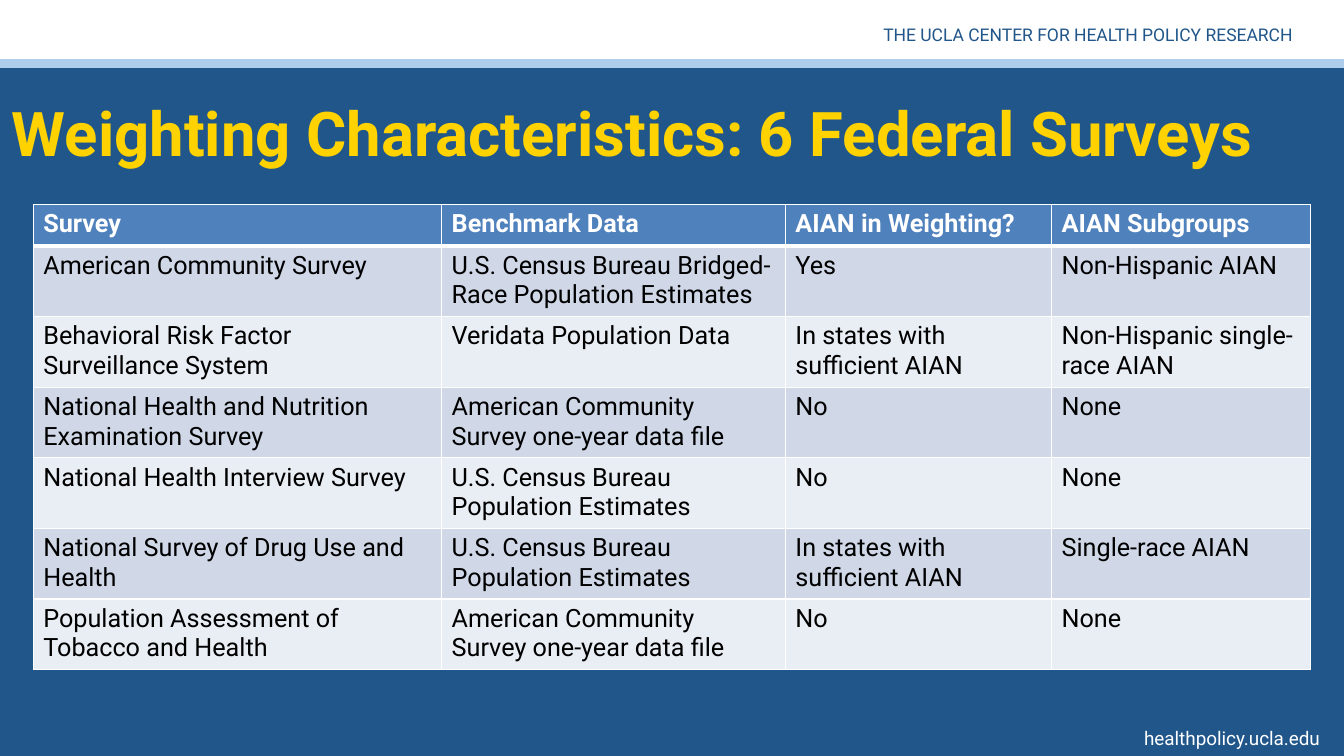
from lxml.etree import SubElement
from pptx import Presentation
from pptx.dml.color import RGBColor
from pptx.enum.shapes import MSO_CONNECTOR as Connector, MSO_SHAPE as Shape
from pptx.enum.text import MSO_ANCHOR as Anchor, PP_ALIGN as Align
from pptx.oxml.ns import qn
from pptx.util import Inches, Pt

WIDTH, HEIGHT = 13.33, 7.5
FONT = "Roboto"
NAVY, SKY, GOLD = "20568A", "AECDEA", "FFD200"
WHITE, BLACK = "FFFFFF", "000000"
HEADER_FILL, BAND_FILLS = "4F81BD", ("D0D8E8", "E9EDF4")

COLUMN_WIDTHS = (4.05, 3.41, 2.64, 2.57)
HEADER_HEIGHT, ROW_HEIGHT = 0.41, 0.68
CENSUS = "U.S. Census Bureau Population Estimates"
ACS_FILE = "American Community Survey one-year data file"
SOME_STATES = "In states with sufficient AIAN"
SURVEYS = (
    ("Survey", "Benchmark Data", "AIAN in Weighting?", "AIAN Subgroups"),
    ("American Community Survey",
     "U.S. Census Bureau Bridged-Race Population Estimates", "Yes", "Non-Hispanic AIAN"),
    ("Behavioral Risk Factor Surveillance System",
     "Veridata Population Data", SOME_STATES, "Non-Hispanic single-race AIAN"),
    ("National Health and Nutrition Examination Survey", ACS_FILE, "No", "None"),
    ("National Health Interview Survey", CENSUS, "No", "None"),
    ("National Survey of Drug Use and Health", CENSUS, SOME_STATES, "Single-race AIAN"),
    ("Population Assessment of Tobacco and Health", ACS_FILE, "No", "None"),
)


def color(hex_string):
    return RGBColor.from_string(hex_string)


def inches(box):
    return [Inches(length) for length in box]


def format_text(paragraph, size, hex_string, bold=False):
    font = paragraph.runs[0].font
    font.name, font.size, font.bold = FONT, Pt(size), bold
    font.color.rgb = color(hex_string)


def add_text(slide, box, text, size, hex_string, bold=False, align=Align.LEFT, anchor=Anchor.TOP):
    frame = slide.shapes.add_textbox(*inches(box)).text_frame
    frame.word_wrap = True
    frame.vertical_anchor = anchor
    frame.text = text
    frame.paragraphs[0].alignment = align
    format_text(frame.paragraphs[0], size, hex_string, bold)


def set_borders(cell, bottom_width):
    properties = cell._tc.get_or_add_tcPr()
    widths = {"a:lnL": 1, "a:lnR": 1, "a:lnT": 1, "a:lnB": bottom_width}
    for position, (tag, width) in enumerate(widths.items()):
        line = SubElement(properties, qn(tag), w=str(Pt(width)))
        fill = SubElement(line, qn("a:solidFill"))
        SubElement(fill, qn("a:srgbClr"), val=WHITE)
        properties.insert(position, line)  # borders come before the cell fill


def add_banner(slide, box):
    left, top, width, height = box
    banner = slide.shapes.add_shape(Shape.RECTANGLE, *inches(box))
    banner.shadow.inherit = False
    banner.fill.solid()
    banner.fill.fore_color.rgb = color(WHITE)
    banner.line.fill.background()
    add_text(slide, (left + width - 5.91, top + 0.19, 5.5, 0.32),
             "THE UCLA CENTER FOR HEALTH POLICY RESEARCH", 12.5, NAVY, align=Align.RIGHT)

    # Rule along the lower edge
    rule_top = top + height - 0.04
    rule = slide.shapes.add_connector(
        Connector.STRAIGHT, *inches((left, rule_top, left + width, rule_top)))
    rule.line.color.rgb = color(SKY)
    rule.line.width = Pt(6.27)
    SubElement(rule._element.spPr, qn("a:effectLst"))


def add_survey_table(slide, box):
    table = slide.shapes.add_table(len(SURVEYS), len(COLUMN_WIDTHS), *inches(box)).table
    for column, width in zip(table.columns, COLUMN_WIDTHS):
        column.width = Inches(width)
    for row_index, texts in enumerate(SURVEYS):
        is_header = row_index == 0
        table.rows[row_index].height = Inches(HEADER_HEIGHT if is_header else ROW_HEIGHT)
        for column_index, text in enumerate(texts):
            cell = table.cell(row_index, column_index)
            cell.text = text
            format_text(cell.text_frame.paragraphs[0], 18,
                        WHITE if is_header else BLACK, is_header)
            cell.fill.solid()
            cell.fill.fore_color.rgb = color(
                HEADER_FILL if is_header else BAND_FILLS[(row_index - 1) % 2])
            set_borders(cell, 3 if is_header else 1)


def main():
    presentation = Presentation()
    presentation.slide_width, presentation.slide_height = inches((WIDTH, HEIGHT))
    slide = presentation.slides.add_slide(presentation.slide_layouts[6])
    slide.background.fill.solid()
    slide.background.fill.fore_color.rgb = color(NAVY)

    # Banner, title, table and footer
    add_banner(slide, (0, 0, WIDTH, 0.67))
    add_text(slide, (0.02, 0.68, WIDTH - 0.02, 1.25),
             "Weighting Characteristics: 6 Federal Surveys", 44, GOLD,
             bold=True, anchor=Anchor.MIDDLE)
    table_height = HEADER_HEIGHT + ROW_HEIGHT * (len(SURVEYS) - 1)
    add_survey_table(slide, (0.33, 2.03, sum(COLUMN_WIDTHS), table_height))
    add_text(slide, (WIDTH - 2.58, HEIGHT - 0.34, 2.44, 0.34),
             "healthpolicy.ucla.edu", 13.5, WHITE, align=Align.RIGHT)

    presentation.save("out.pptx")


if __name__ == "__main__":
    main()
